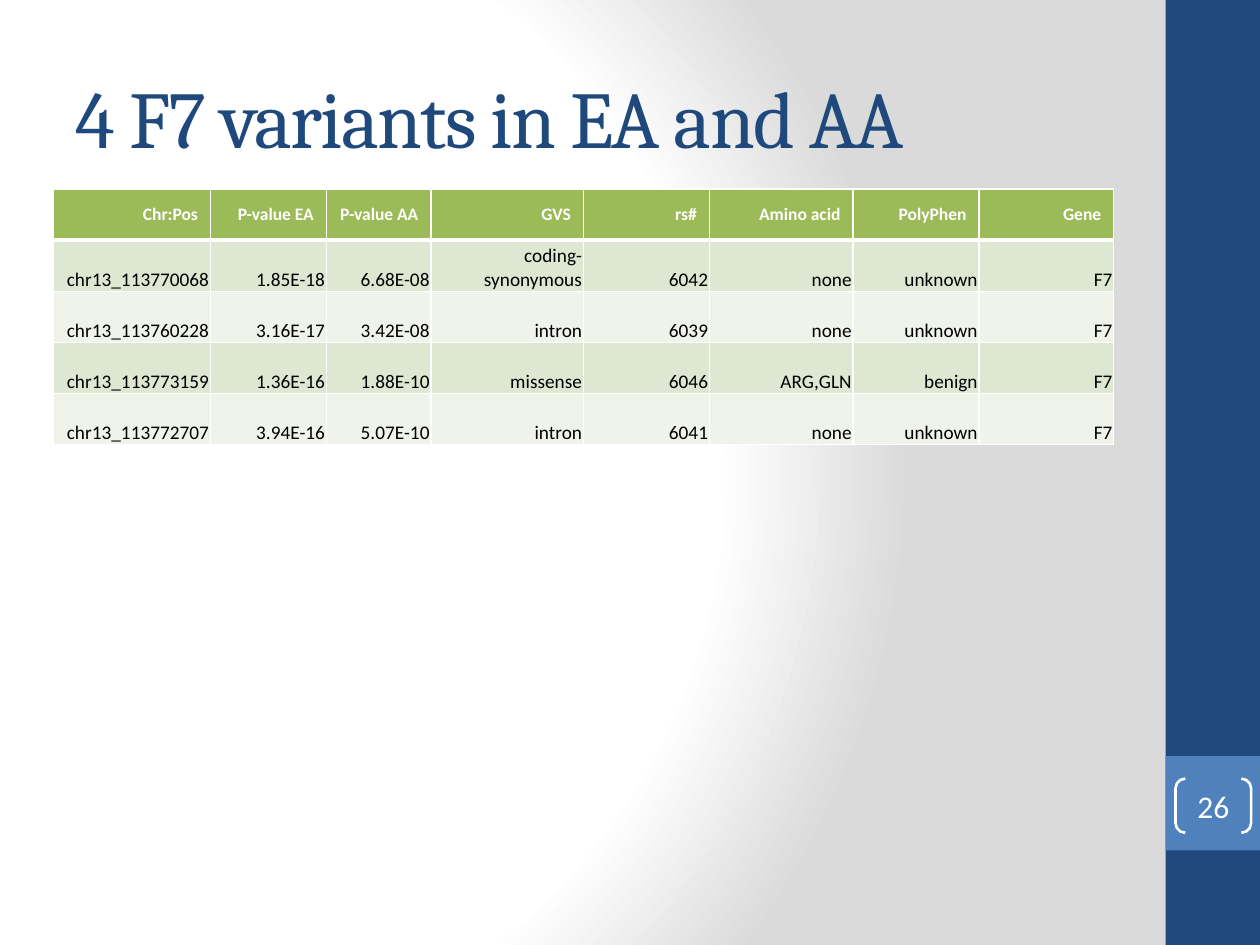
from pptx import Presentation
from pptx.dml.color import RGBColor
from pptx.enum.shapes import MSO_SHAPE as Shape
from pptx.enum.text import MSO_ANCHOR as Anchor, PP_ALIGN as Align
from pptx.oxml import parse_xml
from pptx.oxml.ns import nsdecls, qn
from pptx.util import Inches, Pt

NAVY, BLUE, WHITE, BLACK = "1F497D", "4F81BD", "FFFFFF", "000000"
GREEN, BANDS = "9BBB59", ("DEE7D1", "EFF3EA")
COLUMN_WIDTHS = (1.25, 0.92, 0.83, 1.21, 1, 1.14, 1, 1.07)
VARIANTS = (
    ("Chr:Pos", "P-value EA", "P-value AA", "GVS", "rs#", "Amino acid", "PolyPhen", "Gene"),
    ("chr13_113770068", "1.85E-18", "6.68E-08", "coding-synonymous", "6042", "none", "unknown", "F7"),
    ("chr13_113760228", "3.16E-17", "3.42E-08", "intron", "6039", "none", "unknown", "F7"),
    ("chr13_113773159", "1.36E-16", "1.88E-10", "missense", "6046", "ARG,GLN", "benign", "F7"),
    ("chr13_113772707", "3.94E-16", "5.07E-10", "intron", "6041", "none", "unknown", "F7"),
)


def color(hex_value):
    return RGBColor.from_string(hex_value)


def write(frame, text, size, ink, font="Calibri", bold=False, align=Align.LEFT):
    paragraph = frame.paragraphs[0]
    paragraph.text = text
    paragraph.alignment = align
    paragraph.font.name = font
    paragraph.font.size = Pt(size)
    paragraph.font.bold = bold
    paragraph.font.color.rgb = color(ink)
    return paragraph


def set_margins(owner, left, top, right, bottom):
    owner.margin_left, owner.margin_top = Inches(left), Inches(top)
    owner.margin_right, owner.margin_bottom = Inches(right), Inches(bottom)


def paint_background(slide):
    slide.background.fill.solid()
    background = slide.element.find(".//" + qn("p:bgPr"))
    stops = "".join(
        f'<a:gs pos="{percent * 1000}"><a:srgbClr val="{shade}"/></a:gs>'
        for percent, shade in ((0, WHITE), (75, WHITE), (100, "DADADA"))
    )
    gradient = parse_xml(
        f'<a:gradFill rotWithShape="1" {nsdecls("a")}><a:gsLst>{stops}</a:gsLst>'
        '<a:path path="circle"><a:fillToRect l="20000" t="50000" r="100000" b="50000"/>'
        "</a:path></a:gradFill>"
    )
    background.replace(background.find(qn("a:solidFill")), gradient)


def add_panel(slide, left, top, width, height, fill):
    panel = slide.shapes.add_shape(
        Shape.RECTANGLE, Inches(left), Inches(top), Inches(width), Inches(height)
    )
    panel.shadow.inherit = False
    panel.fill.solid()
    panel.fill.fore_color.rgb = color(fill)
    panel.line.fill.background()


def add_sidebar(slide, left, top, width, height):
    number_top = top + 0.8 * height
    add_panel(slide, left, top, width, height, NAVY)
    add_panel(slide, left, number_top, width, width, BLUE)
    number = slide.shapes.add_shape(
        Shape.DOUBLE_BRACKET,
        Inches(left + 0.08), Inches(number_top + 0.18), Inches(0.6), Inches(0.43),
    )
    number.adjustments[0] = 0.18
    number.shadow.inherit = False
    number.fill.background()
    number.line.color.rgb = color(WHITE)
    number.line.width = Pt(1.5)
    frame = number.text_frame
    set_margins(frame, 0, 0, 0, 0)
    frame.vertical_anchor = Anchor.MIDDLE
    write(frame, "26", 18, WHITE, align=Align.CENTER)


def add_title(slide, left, top, width, height):
    title = slide.shapes.add_textbox(Inches(left), Inches(top), Inches(width), Inches(height))
    frame = title.text_frame
    frame.word_wrap = True
    frame.vertical_anchor = Anchor.MIDDLE
    paragraph = write(frame, "4 F7 variants in EA and AA", 46, NAVY, font="Cambria")
    paragraph.runs[0].font._element.set("spc", "-100")


def set_borders(cell, top, bottom):
    properties = cell._tc.get_or_add_tcPr()
    for side, points in (("L", 1), ("R", 1), ("T", top), ("B", bottom)):
        properties.append(parse_xml(
            f'<a:ln{side} w="{Pt(points)}" {nsdecls("a")}><a:solidFill>'
            f'<a:srgbClr val="{WHITE}"/></a:solidFill></a:ln{side}>'
        ))


def fill_cell(cell, text, row):
    header = row == 0
    set_borders(cell, 3 if row == 1 else 1, 3 if header else 1)
    cell.fill.solid()
    cell.fill.fore_color.rgb = color(GREEN if header else BANDS[(row - 1) % 2])
    if header:
        cell.vertical_anchor = Anchor.MIDDLE
        write(cell.text_frame, text, 10, WHITE, bold=True, align=Align.RIGHT)
    else:
        cell.vertical_anchor = Anchor.BOTTOM
        set_margins(cell, 0.01, 0.01, 0.01, 0)
        write(cell.text_frame, text, 11, BLACK, align=Align.RIGHT)


def add_variant_table(slide, left, top, width, height):
    table = slide.shapes.add_table(
        len(VARIANTS), len(COLUMN_WIDTHS),
        Inches(left), Inches(top), Inches(width), Inches(height),
    ).table
    for column, column_width in zip(table.columns, COLUMN_WIDTHS):
        column.width = Inches(column_width)
    for row, values in enumerate(VARIANTS):
        for column, value in enumerate(values):
            fill_cell(table.cell(row, column), value, row)


def main():
    deck = Presentation()
    deck.slide_width, deck.slide_height = Inches(10), Inches(7.5)
    slide = deck.slides.add_slide(deck.slide_layouts[6])
    paint_background(slide)
    add_sidebar(slide, 9.25, 0, 0.75, 7.5)
    add_title(slide, 0.5, 0.3, 8.33, 1.25)
    add_variant_table(slide, 0.42, 1.5, sum(COLUMN_WIDTHS), 2.03)
    deck.save("out.pptx")


if __name__ == "__main__":
    main()
